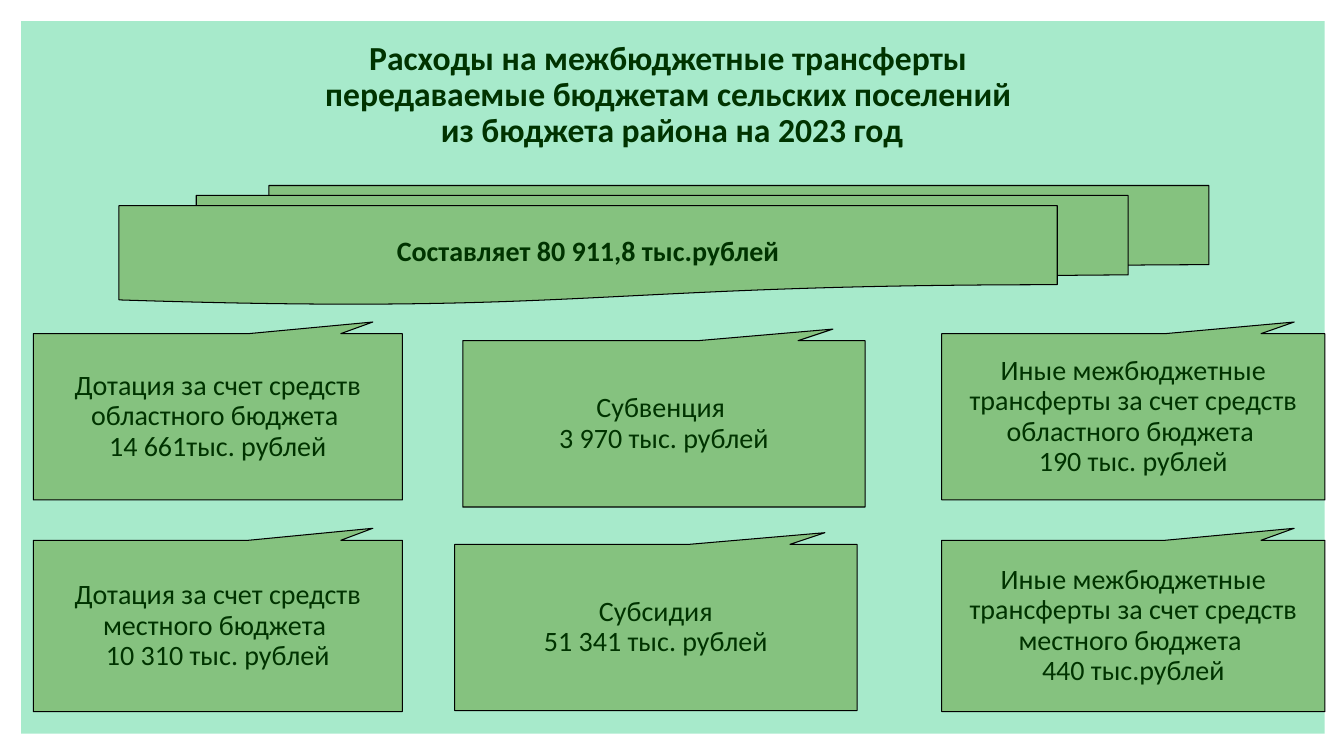
from pptx import Presentation
from pptx import util as u
from pptx.dml.color import RGBColor
from pptx.enum import shapes, text


def colour(value):
    return RGBColor.from_string(value)


class BudgetSlide:
    font_name = "Calibri"
    text_colour = "003300"
    panel_colour = "A7EACB"
    box_colour = "85C27F"
    line_colour = "000000"

    def __init__(self, presentation):
        self.slide = presentation.slides.add_slide(presentation.slide_layouts[5])

    def set_text(self, shape, lines, size, bold=False):
        frame = shape.text_frame
        frame.text = "\n".join(lines)
        for paragraph in frame.paragraphs:
            paragraph.alignment = text.PP_ALIGN.CENTER
            paragraph.line_spacing = 0.9
            paragraph.space_before = u.Pt(0)
            paragraph.font.name = self.font_name
            paragraph.font.size = u.Pt(size)
            paragraph.font.bold = bold
            paragraph.font.color.rgb = colour(self.text_colour)
        return frame

    def shape(self, preset, place, fill, outlined=True):
        shape = self.slide.shapes.add_shape(preset, *map(u.Inches, place))
        shape.shadow.inherit = False
        shape.fill.solid()
        shape.fill.fore_color.rgb = colour(fill)
        if outlined:
            shape.line.color.rgb = colour(self.line_colour)
            shape.line.width = u.Pt(0.75)
        else:
            shape.line.fill.background()
        return shape

    def panel(self, place):
        self.shape(shapes.MSO_SHAPE.RECTANGLE, place, self.panel_colour, outlined=False)

    def title(self, place, lines):
        title = self.slide.shapes.title
        title.left, title.top, title.width, title.height = map(u.Inches, place)
        frame = self.set_text(title, lines, 24, bold=True)
        frame.vertical_anchor = text.MSO_ANCHOR.TOP
        frame.auto_size = text.MSO_AUTO_SIZE.NONE
        title.element.getparent().append(title.element)

    def total(self, place, line):
        shape = self.shape(shapes.MSO_SHAPE.FLOWCHART_MULTIDOCUMENT, place, self.box_colour)
        frame = self.set_text(shape, [line], 20, bold=True)
        frame.vertical_anchor = text.MSO_ANCHOR.MIDDLE
        frame.word_wrap = False

    def callout(self, place, lines):
        shape = self.shape(shapes.MSO_SHAPE.RECTANGULAR_CALLOUT, place, self.box_colour)
        shape.adjustments[0] = -0.42
        shape.adjustments[1] = 0.57
        shape.rotation = 180
        frame = self.set_text(shape, lines, 20)
        frame.vertical_anchor = text.MSO_ANCHOR.MIDDLE
        frame.word_wrap = True
        shape.element.txBody.bodyPr.set("rot", "10800000")


def main():
    presentation = Presentation()
    presentation.slide_width = u.Inches(13.33)
    presentation.slide_height = u.Inches(7.5)
    budget = BudgetSlide(presentation)

    budget.panel((0.21, 0.21, 12.93, 7.07))
    budget.total((1.18, 1.84, 10.81, 1.18), "Составляет 80 911,8 тыс.рублей")
    budget.title((0.21, 0.36, 12.91, 1.19), [
        "Расходы на межбюджетные трансферты ",
        "передаваемые бюджетам сельских поселений ",
        "из бюджета района на 2023 год",
    ])

    transfers = [
        ((0.33, 3.31, 3.66, 1.65),
         ["Дотация за счет средств областного бюджета ", "14 661тыс. рублей"]),
        ((0.33, 5.36, 3.66, 1.7),
         ["Дотация за счет средств местного бюджета ", "10 310 тыс. рублей"]),
        ((4.59, 3.38, 3.99, 1.65),
         ["Субвенция ", "3 970 тыс. рублей"]),
        ((4.51, 5.4, 3.99, 1.65),
         ["Субсидия", "51 341 тыс. рублей"]),
        ((9.34, 3.31, 3.8, 1.65),
         ["Иные межбюджетные трансферты за счет средств областного бюджета ",
          "190 тыс. рублей"]),
        ((9.34, 5.36, 3.8, 1.7),
         ["Иные межбюджетные трансферты за счет средств местного бюджета ",
          "440 тыс.рублей"]),
    ]
    for place, lines in transfers:
        budget.callout(place, lines)

    presentation.save("out.pptx")


if __name__ == "__main__":
    main()
